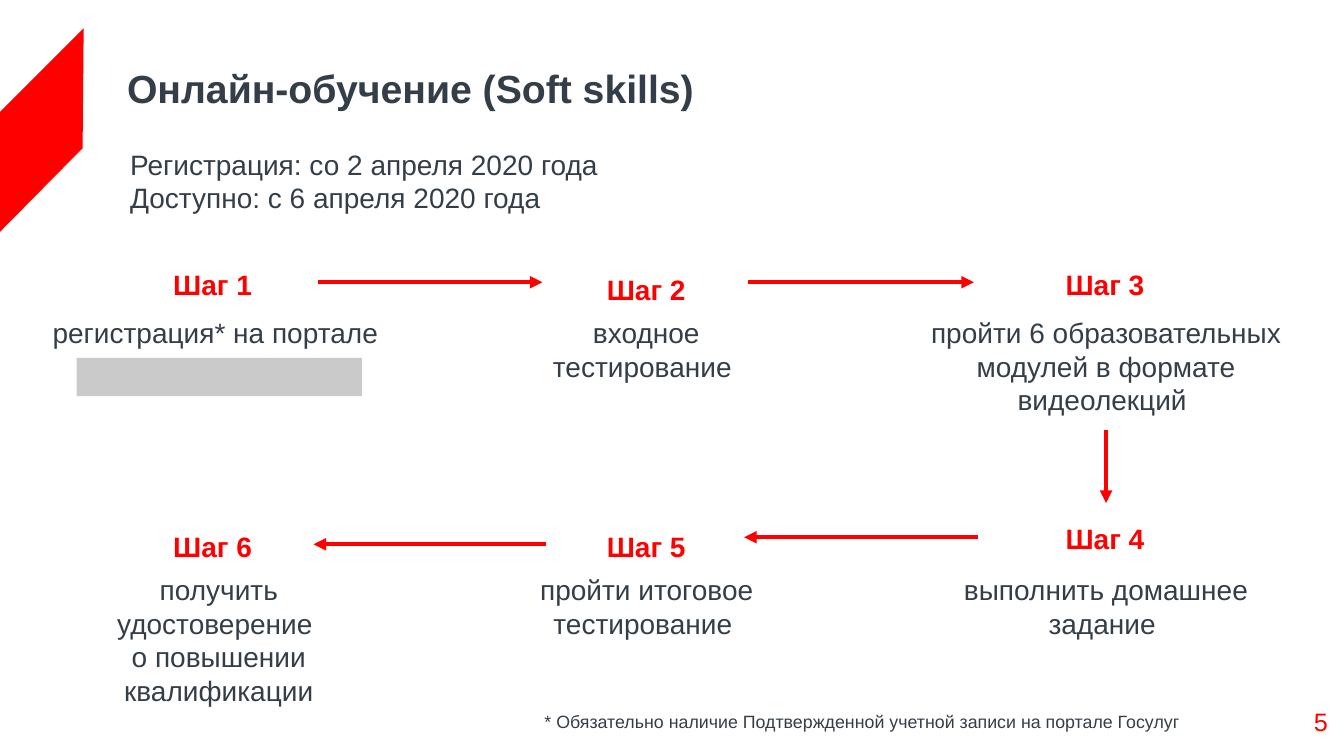
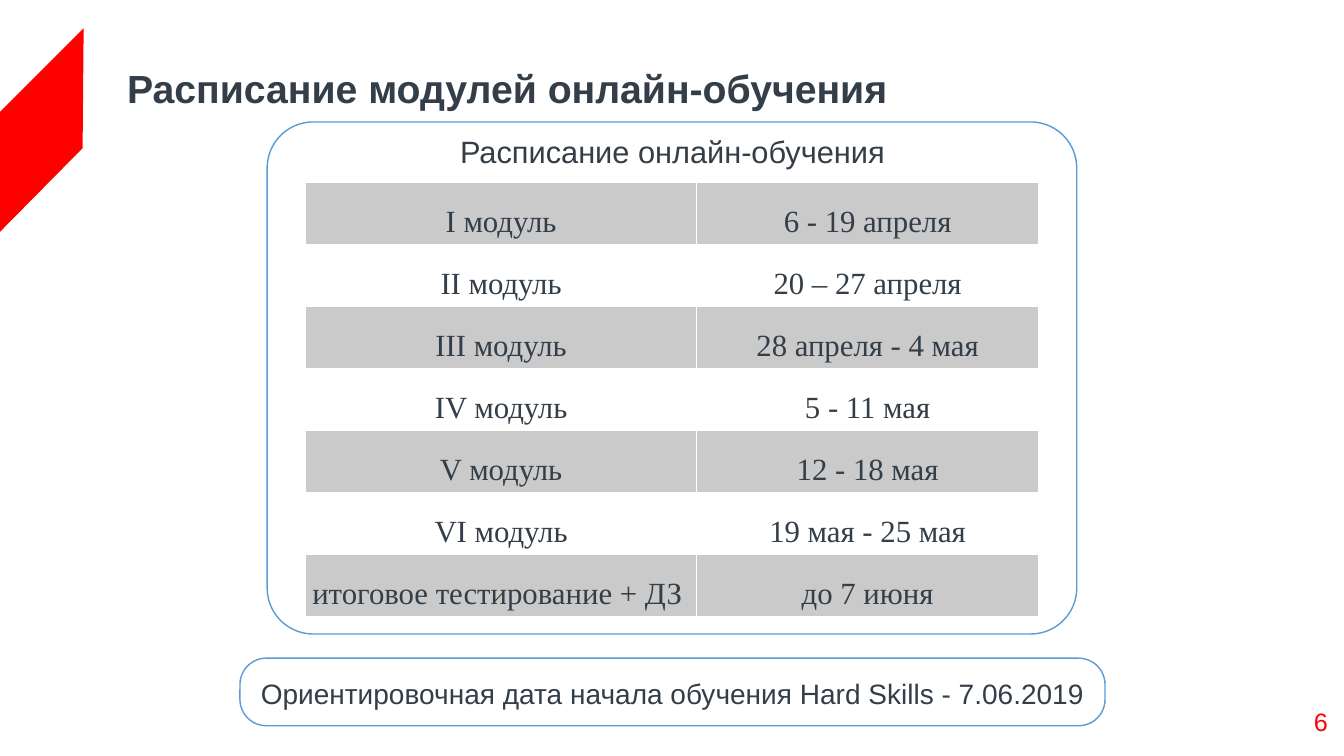
from lxml import etree
from pptx import Presentation
from pptx.dml.color import RGBColor
from pptx.enum import shapes, text
from pptx.oxml.ns import qn
from pptx.util import Inches, Pt

RED = RGBColor(0xFF, 0x00, 0x00)
SLATE = RGBColor(0x33, 0x3E, 0x48)
WHITE = RGBColor(0xFF, 0xFF, 0xFF)
GREY = RGBColor(0xCA, 0xCA, 0xCA)
BLUE = RGBColor(0x5B, 0x9B, 0xD5)
CENTER, RIGHT = text.PP_ALIGN.CENTER, text.PP_ALIGN.RIGHT
MIDDLE = text.MSO_ANCHOR.MIDDLE

FIRST_PAGE = 5
BAND = [(0, 1.11), (0.83, 0.28), (0.82, 1.47), (0, 2.3)]

DATES = ["Регистрация: со 2 апреля 2020 года", "Доступно: с 6 апреля 2020 года"]
PORTAL_BOX = (0.76, 3.55, 2.83, 0.38)
COLUMNS = [2.11, 6.41, 10.96]
LABEL_WIDTH = 1.5
ROW_TOPS = [3.08, 5.63]
STEPS = [
    ("Шаг 1", 0, 0, 2.6, 0.24, 3.87, "регистрация* на портале "),
    ("Шаг 2", 1, 0, 2.65, 5.07, 2.68, "входное тестирование "),
    ("Шаг 3", 2, 0, 2.6, 9.11, 3.72, "пройти 6 образовательных модулей в формате видеолекций "),
    ("Шаг 4", 2, 1, 5.12, 9.11, 3.72, "выполнить домашнее задание "),
    ("Шаг 5", 1, 1, 5.2, 5, 2.83, "пройти итоговое тестирование "),
    ("Шаг 6", 0, 1, 5.2, 0.62, 3.1, "получить удостоверение \vо повышении квалификации"),
]
ARROWS = [
    (3.15, 2.8, 5.38, 2.8),
    (7.42, 2.8, 9.66, 2.8),
    (10.97, 4.27, 10.97, 4.99),
    (9.7, 5.33, 7.38, 5.33),
    (5.42, 5.4, 3.11, 5.4),
]
FOOTNOTE = "* Обязательно наличие Подтвержденной учетной записи на портале Госулуг"

SCHEDULE = [
    ("I модуль", "6 - 19 апреля"),
    ("II модуль", "20 – 27 апреля"),
    ("III модуль", "28 апреля - 4 мая"),
    ("IV модуль", "5 - 11 мая"),
    ("V модуль", "12 - 18 мая"),
    ("VI модуль", "19 мая - 25 мая"),
    ("итоговое тестирование + ДЗ ", "до 7 июня"),
]
SCHEDULE_WIDTHS = [3.88, 3.39]
SCHEDULE_BOX = (3.03, 1.81, sum(SCHEDULE_WIDTHS), 4.31)
PANELS = [
    ((2.65, 1.21, 8.03, 5.08), 0.09, (3.03, 1.27, 7.28, 0.47), 22,
     "Расписание онлайн-обучения"),
    ((2.38, 6.53, 8.58, 0.67), 0.39, (2.41, 6.66, 8.52, 0.44), 20,
     "Ориентировочная дата начала обучения Hard Skills - 7.06.2019"),
]


def inches(values):
    return [Inches(value) for value in values]


def write(frame, paragraphs, align=None, spacing=None, anchor=None, inset=0.05,
          size=20, font="Arial", color=SLATE, bold=False):
    frame.word_wrap = True
    frame.margin_left = frame.margin_right = Inches(inset)
    frame.margin_top = frame.margin_bottom = Inches(inset)
    if anchor is not None:
        frame.vertical_anchor = anchor
    for index, words in enumerate(paragraphs):
        paragraph = frame.add_paragraph() if index else frame.paragraphs[0]
        paragraph.alignment = align
        paragraph.line_spacing = spacing
        for number, line in enumerate(words.split("\v")):
            if number:
                paragraph.add_line_break()
            run = paragraph.add_run()
            run.text = line
            run.font.size = Pt(size)
            run.font.name = font
            run.font.bold = bold
            run.font.color.rgb = color


def add_text(slide, box, *paragraphs, **style):
    write(slide.shapes.add_textbox(*inches(box)).text_frame, paragraphs, **style)


def add_arrow(slide, ends):
    arrow = slide.shapes.add_connector(shapes.MSO_CONNECTOR.STRAIGHT, *inches(ends))
    arrow.line.color.rgb = RED
    arrow.line.width = Pt(3)
    etree.SubElement(arrow.line._get_or_add_ln(), qn("a:tailEnd"), type="triangle")
    etree.SubElement(arrow._element.spPr, qn("a:effectLst"))


def paint(shape, color):
    shape.shadow.inherit = False
    shape.fill.solid()
    shape.fill.fore_color.rgb = color
    shape.line.fill.background()


def add_panel(slide, box, rounding):
    panel = slide.shapes.add_shape(shapes.MSO_SHAPE.ROUNDED_RECTANGLE, *inches(box))
    panel.adjustments[0] = rounding
    panel.shadow.inherit = False
    panel.fill.background()
    panel.line.color.rgb = BLUE
    panel.line.width = Pt(1)


def set_borders(cell, color):
    properties = cell._tc.get_or_add_tcPr()
    for index, side in enumerate(("lnL", "lnR", "lnT", "lnB")):
        border = etree.Element(qn(f"a:{side}"), w=str(Pt(1)))
        fill = etree.SubElement(border, qn("a:solidFill"))
        etree.SubElement(fill, qn("a:srgbClr"), val=str(color))
        properties.insert(index, border)


def add_schedule(slide):
    table = slide.shapes.add_table(len(SCHEDULE), len(SCHEDULE_WIDTHS), *inches(SCHEDULE_BOX)).table
    table.first_row = table.horz_banding = False
    for column, width in zip(table.columns, SCHEDULE_WIDTHS):
        column.width = Inches(width)
    for index, (row, entries) in enumerate(zip(table.rows, SCHEDULE)):
        row.height = Inches(SCHEDULE_BOX[3] / len(SCHEDULE))
        for cell, entry in zip(row.cells, entries):
            write(cell.text_frame, [entry], align=CENTER, spacing=1.5, size=22,
                  font="Times New Roman")
            cell.margin_left = cell.margin_right = cell.margin_top = cell.margin_bottom = 0
            cell.vertical_anchor = MIDDLE
            cell.fill.solid()
            cell.fill.fore_color.rgb = WHITE if index % 2 else GREY
            set_borders(cell, WHITE)


def add_slide(prs, title):
    slide = prs.slides.add_slide(prs.slide_layouts[6])
    corners = [tuple(inches(corner)) for corner in BAND]
    outline = slide.shapes.build_freeform(*corners[0])
    outline.add_line_segments(corners[1:], close=True)
    paint(outline.convert_to_shape(), RED)
    add_text(slide, (1.21, 0.4, 8.81, 1), title, size=28, bold=True, spacing=0.9, anchor=MIDDLE)
    page = FIRST_PAGE + len(prs.slides) - 1
    add_text(slide, (12.62, 6.96, 0.6, 0.39), str(page), size=18, color=RED, align=RIGHT)
    return slide


def add_steps_slide(prs):
    slide = add_slide(prs, "Онлайн-обучение (Soft skills)")
    add_text(slide, (1.24, 1.41, 6, 0.77), *DATES)
    for label, column, row, label_top, left, width, task in STEPS:
        label_left = COLUMNS[column] - LABEL_WIDTH / 2
        add_text(slide, (label_left, label_top, LABEL_WIDTH, 0.41), label,
                 color=RED, bold=True, align=CENTER)
        add_text(slide, (left, ROW_TOPS[row], width, 1.05), task, align=CENTER)
    paint(slide.shapes.add_shape(shapes.MSO_SHAPE.RECTANGLE, *inches(PORTAL_BOX)), GREY)
    for ends in ARROWS:
        add_arrow(slide, ends)
    add_text(slide, (5.35, 7, 6.94, 0.37), FOOTNOTE, size=12.7)


def add_schedule_slide(prs):
    slide = add_slide(prs, "Расписание модулей онлайн-обучения")
    for box, rounding, caption_box, size, caption in PANELS:
        add_panel(slide, box, rounding)
        add_text(slide, caption_box, caption, size=size, align=CENTER)
    add_schedule(slide)


def main():
    prs = Presentation()
    prs.slide_width, prs.slide_height = Inches(13.33), Inches(7.5)
    add_steps_slide(prs)
    add_schedule_slide(prs)
    prs.save("out.pptx")


if __name__ == "__main__":
    main()
